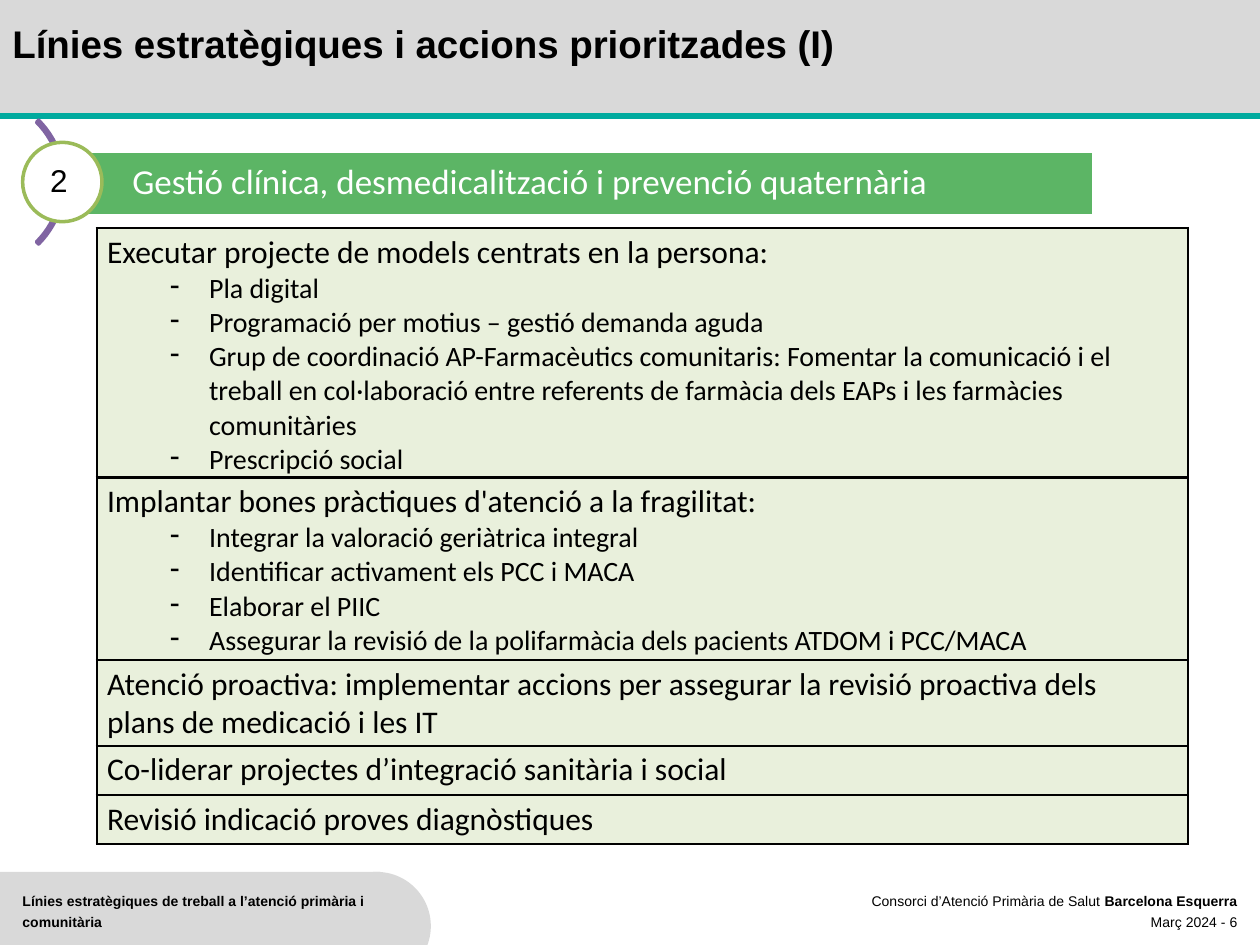
from lxml.etree import SubElement
from pptx import Presentation
from pptx.dml.color import RGBColor
from pptx.enum.shapes import MSO_CONNECTOR as Connector, MSO_SHAPE as Shape
from pptx.enum.text import MSO_ANCHOR as Anchor, PP_ALIGN as Align
from pptx.oxml import parse_xml
from pptx.oxml.ns import nsdecls, qn
from pptx.util import Inches, Pt

COLORS = {
    "black": "000000",
    "white": "FFFFFF",
    "gray": "D9D9D9",
    "teal": "00AA9E",
    "purple": "8064A2",
    "green": "5CB565",
    "olive": "9BBB59",
    "pale": "E9F0DC",
}

ACTIONS = [
    (1.98, "Executar projecte de models centrats en la\u00a0persona:", [
        "Pla digital",
        "Programació per motius – gestió demanda aguda",
        "Grup de coordinació AP-Farmacèutics comunitaris: Fomentar la comunicació i el "
        "treball en col·laboració entre referents de farmàcia dels EAPs i les farmàcies comunitàries",
        "Prescripció social",
    ]),
    (1.45, "Implantar bones pràctiques d'atenció a la fragilitat:", [
        "Integrar la valoració geriàtrica integral",
        "Identificar activament els PCC i MACA",
        "Elaborar el PIIC",
        "Assegurar la revisió de la polifarmàcia dels pacients ATDOM i PCC/MACA",
    ]),
    (0.68, "Atenció proactiva: implementar accions per assegurar la revisió proactiva dels "
           "plans\u00a0de\u00a0medicació i les IT", []),
    (0.39, "Co-liderar projectes d’integració sanitària i social", []),
    (0.39, "Revisió indicació proves diagnòstiques", []),
]


def color(name):
    """Return the RGB value of a named colour."""
    return RGBColor.from_string(COLORS[name])


def add_shape(slide, preset, box, fill, line=None):
    """Add a filled preset shape with an optional 2 pt outline."""
    shape = slide.shapes.add_shape(preset, *map(Inches, box))
    shape.shadow.inherit = False
    shape.fill.solid()
    shape.fill.fore_color.rgb = color(fill)
    if line:
        shape.line.color.rgb = color(line)
        shape.line.width = Pt(2)
    else:
        shape.line.fill.background()
    return shape


def add_run(paragraph, text, size, font="Arial", bold=False, fill="black"):
    """Append one formatted run to a paragraph."""
    run = paragraph.add_run()
    run.text = text
    run.font.size = Pt(size)
    run.font.name = font
    run.font.bold = bold
    run.font.color.rgb = color(fill)


def add_text(slide, box, lines, size, spacing=None, align=Align.LEFT):
    """Add a text box whose lines are lists of (text, bold) runs."""
    frame = slide.shapes.add_textbox(*map(Inches, box)).text_frame
    frame.word_wrap = True
    for index, runs in enumerate(lines):
        paragraph = frame.add_paragraph() if index else frame.paragraphs[0]
        paragraph.alignment = align
        if spacing:
            paragraph.line_spacing = Pt(spacing)
        for text, bold in runs:
            add_run(paragraph, text, size, bold=bold)


def add_rule(slide):
    """Add the teal rule below the header."""
    rule = slide.shapes.add_connector(
        Connector.STRAIGHT, Inches(0), Inches(0.92), Inches(10), Inches(0.92))
    rule.line.color.rgb = color("teal")
    rule.line.width = Pt(3)
    SubElement(rule._element.spPr, qn("a:effectLst"))


def add_heading(slide):
    """Add the numbered heading with its arc, bar and circle."""
    arc = add_shape(slide, Shape.BLOCK_ARC, (-0.88, 0.75, 1.39, 1.39), "purple", "purple")
    for index, value in enumerate((189, 27, 0.017)):
        arc.adjustments[index] = value
    bar = add_shape(slide, Shape.RECTANGLE, (0.33, 1.2, 8.35, 0.51), "green", "white")
    frame = bar.text_frame
    frame.word_wrap = True
    frame.vertical_anchor = Anchor.MIDDLE
    frame.margin_left = Inches(0.72)
    frame.margin_top = frame.margin_right = frame.margin_bottom = Inches(0.06)
    paragraph = frame.paragraphs[0]
    paragraph.alignment = Align.LEFT
    paragraph.line_spacing = 0.9
    add_run(paragraph, "Gestió clínica,\u00a0desmedicalització\u00a0i prevenció quaternària",
            20, "Calibri", fill="white")
    add_shape(slide, Shape.OVAL, (0.18, 1.13, 0.63, 0.63), "white", "olive")
    add_text(slide, (0.3, 1.23, 0.39, 0.4), [[("2", False)]], 18)


def add_bullet(frame, text):
    """Append a dashed, indented item to a text frame."""
    paragraph = frame.add_paragraph()
    paragraph.level = 1
    properties = paragraph._p.get_or_add_pPr()
    properties.set("marL", str(Inches(0.81)))
    properties.set("indent", str(Inches(-0.31)))
    SubElement(properties, qn("a:buChar"), char="-")
    add_run(paragraph, text, 16, "Calibri")


def set_borders(cell):
    """Draw a black border on the four sides of a cell."""
    properties = cell._tc.get_or_add_tcPr()
    for index, side in enumerate(("lnL", "lnR", "lnT", "lnB")):
        properties.insert(index, parse_xml(
            f'<a:{side} {nsdecls("a")} w="{Pt(1.67)}"><a:solidFill>'
            f'<a:srgbClr val="{COLORS["black"]}"/></a:solidFill></a:{side}>'))


def add_actions(slide):
    """Add the one-column table of prioritised actions."""
    height = sum(row_height for row_height, _, _ in ACTIONS)
    table = slide.shapes.add_table(
        len(ACTIONS), 1, Inches(0.77), Inches(1.81), Inches(8.66), Inches(height)).table
    table.first_row = table.horz_banding = False
    for index, (row_height, title, items) in enumerate(ACTIONS):
        table.rows[index].height = Inches(row_height)
        cell = table.cell(index, 0)
        cell.margin_left = cell.margin_right = Inches(0.08)
        cell.margin_top = cell.margin_bottom = Inches(0.04)
        cell.fill.solid()
        cell.fill.fore_color.rgb = color("pale")
        set_borders(cell)
        add_run(cell.text_frame.paragraphs[0], title, 18, "Calibri")
        for item in items:
            add_bullet(cell.text_frame, item)


def main():
    """Build and save the slide."""
    presentation = Presentation()
    presentation.slide_width, presentation.slide_height = Inches(10), Inches(7.5)
    slide = presentation.slides.add_slide(presentation.slide_layouts[6])
    add_shape(slide, Shape.RECTANGLE, (0, 6.92, 3.02, 0.72), "gray")
    add_shape(slide, Shape.OVAL, (2.56, 6.92, 0.86, 0.86), "gray")
    add_shape(slide, Shape.RECTANGLE, (0, 0, 10, 0.92), "gray")
    add_text(slide, (0.08, 7, 3.02, 0.47), [
        [("Línies estratègiques de treball a l’atenció primària i comunitària", True)],
    ], 8, spacing=12)
    add_rule(slide)
    add_text(slide, (6.75, 7, 3.17, 0.5), [
        [("Consorci d’Atenció Primària de Salut ", False), ("Barcelona Esquerra", True)],
        [("Març 2024 - 6", False)],
    ], 8, spacing=12, align=Align.RIGHT)
    add_text(slide, (0, 0.17, 8.53, 0.72), [
        [("Línies estratègiques i accions prioritzades (I)", True)],
    ], 22, spacing=22)
    add_heading(slide)
    add_actions(slide)
    presentation.save("out.pptx")


if __name__ == "__main__":
    main()
